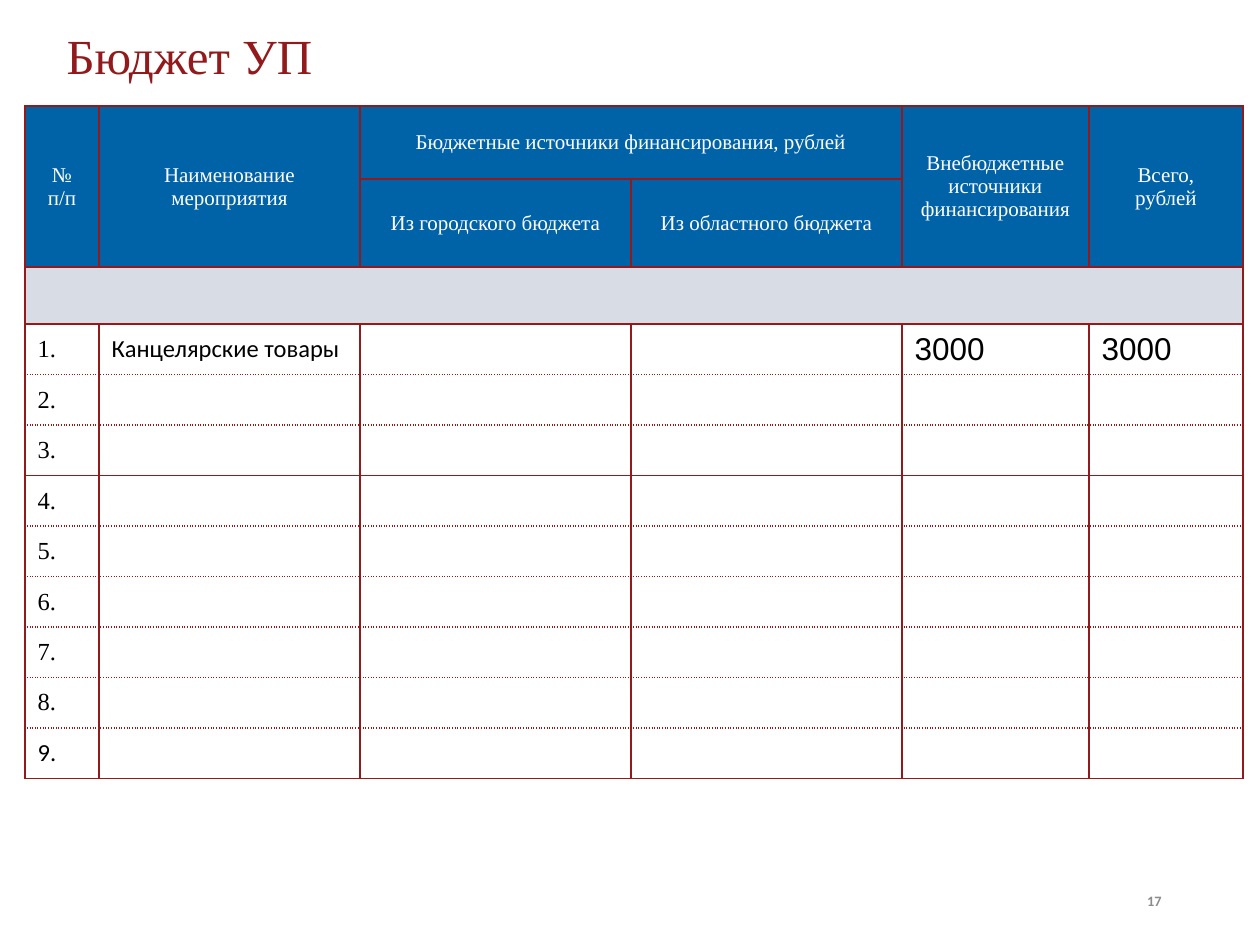
from lxml import etree
from pptx import Presentation
from pptx import util as u
from pptx.dml import color
from pptx.enum import text
from pptx.oxml import ns

PX_PER_INCH = 126
COLORS = {
    "red": "921A1D",
    "blue": "0062A7",
    "band": "D8DCE5",
    "white": "FFFFFF",
    "black": "000000",
    "gray": "8C8C8C",
}
SERIF = "Times New Roman"
COLUMN_WIDTHS = [74, 261, 271, 271, 187, 154]
HEADER_HEIGHTS = [73, 82, 57]
ITEM_HEIGHT = 43
ITEM_COUNT = 9
GROUP_ENDS = (3, ITEM_COUNT)
HEADERS = [
    (0, 0, 1, 0, ["№", "п/п"]),
    (0, 1, 1, 1, ["Наименование", "мероприятия"]),
    (0, 2, 0, 3, ["Бюджетные источники финансирования, рублей"]),
    (0, 4, 1, 4, ["Внебюджетные", "источники", "финансирования"]),
    (0, 5, 1, 5, ["Всего,", "рублей"]),
    (1, 2, 1, 2, ["Из городского бюджета"]),
    (1, 3, 1, 3, ["Из областного бюджета"]),
]
FIRST_ITEM = [
    (1, "Канцелярские товары", 14, "Calibri"),
    (4, "3000", 18, "Arial"),
    (5, "3000", 18, "Arial"),
]


def px(value):
    return u.Emu(round(value * u.Inches(1) / PX_PER_INCH))


def rgb(name):
    return color.RGBColor.from_string(COLORS[name])


def write(frame, lines, size, font, ink, align=text.PP_ALIGN.LEFT, bold=False):
    for index, line in enumerate(lines):
        paragraph = frame.paragraphs[0] if index == 0 else frame.add_paragraph()
        paragraph.alignment = align
        run = paragraph.add_run()
        run.text = line
        run.font.size = u.Pt(size)
        run.font.name = font
        run.font.bold = bold
        run.font.color.rgb = rgb(ink)


def style_cell(cell, fill, top="solid", bottom="solid"):
    properties = cell._tc.get_or_add_tcPr()
    sides = {"lnL": "solid", "lnR": "solid", "lnT": top, "lnB": bottom}
    for side, dash in sides.items():
        line = etree.SubElement(properties, ns.qn(f"a:{side}"), w=str(u.Pt(1)))
        solid = etree.SubElement(line, ns.qn("a:solidFill"))
        etree.SubElement(solid, ns.qn("a:srgbClr"), val=COLORS["red"])
        etree.SubElement(line, ns.qn("a:prstDash"), val=dash)
    cell.fill.solid()
    cell.fill.fore_color.rgb = rgb(fill)
    cell.vertical_anchor = text.MSO_ANCHOR.MIDDLE


def add_title(slide, left, top, width, height):
    title = slide.shapes.title
    title.left, title.top = px(left), px(top)
    title.width, title.height = px(width), px(height)
    frame = title.text_frame
    frame.vertical_anchor = text.MSO_ANCHOR.MIDDLE
    write(frame, ["Бюджет УП"], 28, SERIF, "red")
    frame.paragraphs[0].line_spacing = 0.9


def fill_header(table):
    for row in range(len(HEADER_HEIGHTS)):
        for column in range(len(COLUMN_WIDTHS)):
            style_cell(table.cell(row, column), "blue" if row < 2 else "band")
    for row, column, last_row, last_column, lines in HEADERS:
        cell = table.cell(row, column)
        if (row, column) != (last_row, last_column):
            cell.merge(table.cell(last_row, last_column))
        write(cell.text_frame, lines, 12, SERIF, "white", text.PP_ALIGN.CENTER)
    table.cell(2, 0).merge(table.cell(2, len(COLUMN_WIDTHS) - 1))


def fill_items(table):
    first_row = len(HEADER_HEIGHTS)
    for number in range(1, ITEM_COUNT + 1):
        row = first_row + number - 1
        top = "solid" if number - 1 in (0, *GROUP_ENDS) else "sysDot"
        bottom = "solid" if number in GROUP_ENDS else "sysDot"
        for column in range(len(COLUMN_WIDTHS)):
            style_cell(table.cell(row, column), "white", top, bottom)
        font = "Calibri" if number == ITEM_COUNT else SERIF
        write(table.cell(row, 0).text_frame, [f"{number}."], 14, font, "black")
    for column, value, size, font in FIRST_ITEM:
        write(table.cell(first_row, column).text_frame, [value], size, font, "black")


def add_budget_table(slide, left, top):
    heights = HEADER_HEIGHTS + [ITEM_HEIGHT] * ITEM_COUNT
    shape = slide.shapes.add_table(
        len(heights), len(COLUMN_WIDTHS),
        px(left), px(top), px(sum(COLUMN_WIDTHS)), px(sum(heights)),
    )
    table = shape.table
    table.first_row = False
    table.horz_banding = False
    for column, width in zip(table.columns, COLUMN_WIDTHS):
        column.width = px(width)
    for row, height in zip(table.rows, heights):
        row.height = px(height)
    fill_header(table)
    fill_items(table)


def add_page_number(slide, left, top, width, height):
    box = slide.shapes.add_textbox(px(left), px(top), px(width), px(height))
    frame = box.text_frame
    frame.word_wrap = True
    frame.vertical_anchor = text.MSO_ANCHOR.MIDDLE
    write(frame, ["17"], 8.2, "Calibri", "gray", text.PP_ALIGN.RIGHT, bold=True)


def main():
    presentation = Presentation()
    presentation.slide_width = px(1260)
    presentation.slide_height = px(945)
    slide = presentation.slides.add_slide(presentation.slide_layouts[5])
    add_page_number(slide, 891, 876, 283, 50)
    add_title(slide, 54, -4, 537, 125)
    add_budget_table(slide, 25, 106)
    presentation.save("out.pptx")


if __name__ == "__main__":
    main()
